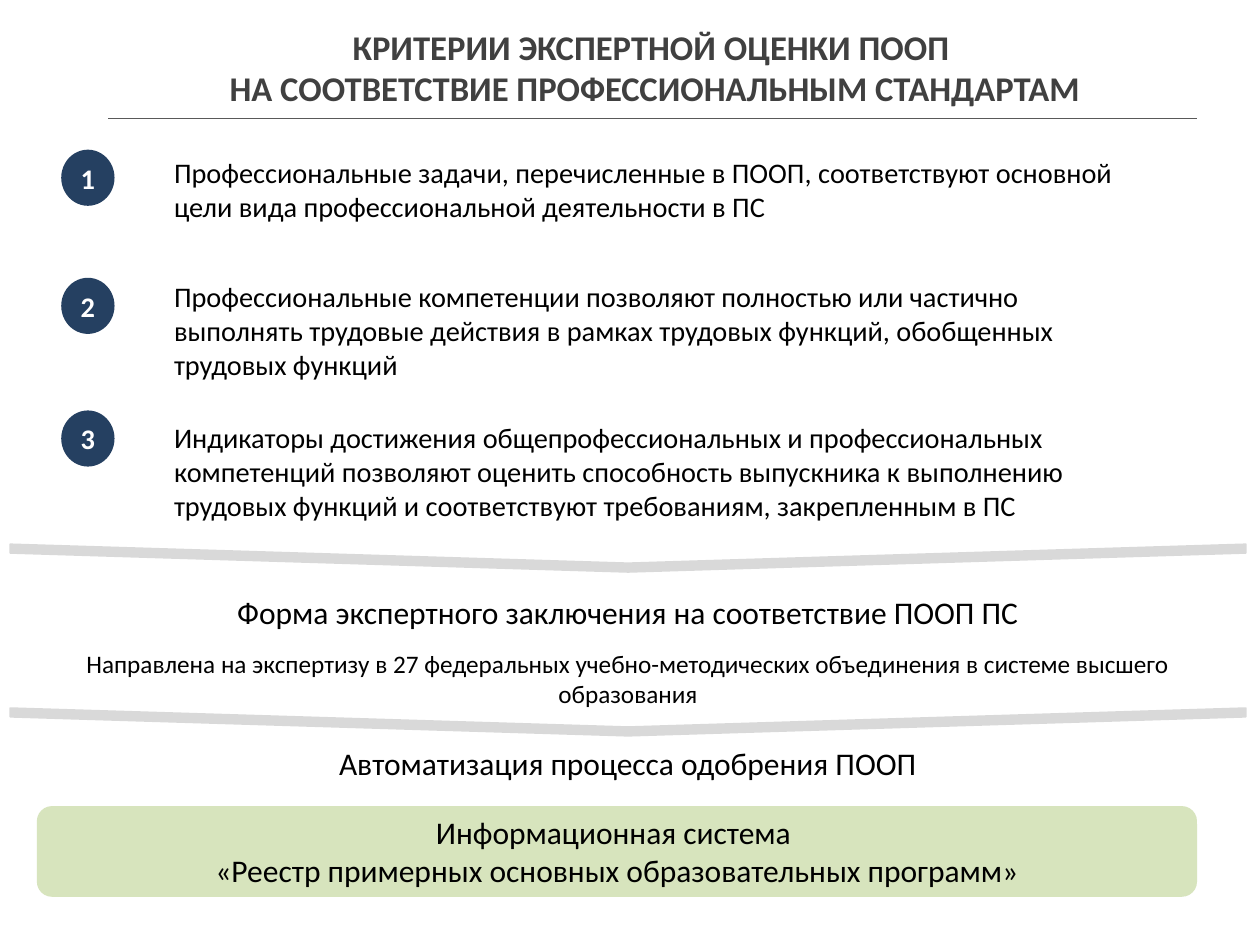
from pptx import Presentation
from pptx.dml.color import RGBColor
from pptx.enum.shapes import MSO_CONNECTOR, MSO_SHAPE as Shape
from pptx.enum.text import MSO_ANCHOR as Anchor, PP_ALIGN as Align
from pptx.oxml.ns import qn
from pptx.util import Inches, Pt
from lxml import etree

BLACK = RGBColor(0x00, 0x00, 0x00)
WHITE = RGBColor(0xFF, 0xFF, 0xFF)
TITLE_GRAY = RGBColor(0x40, 0x40, 0x40)
RULE_GRAY = RGBColor(0x59, 0x59, 0x59)
CHEVRON_GRAY = RGBColor(0xD9, 0xD9, 0xD9)
NAVY = RGBColor(0x25, 0x40, 0x61)
GREEN = RGBColor(0xD7, 0xE4, 0xBD)

presentation = Presentation()
presentation.slide_width = Inches(22.22)
presentation.slide_height = Inches(16.67)
slide = presentation.slides.add_slide(presentation.slide_layouts[6])


def write_text(shape, lines, size, color=BLACK, bold=False, align=Align.CENTER, anchor=Anchor.TOP):
    frame = shape.text_frame
    frame.word_wrap = True
    frame.vertical_anchor = anchor
    paragraph = frame.paragraphs[0]
    paragraph.alignment = align
    for index, line in enumerate(lines):
        if index:
            paragraph.add_line_break()
        run = paragraph.add_run()
        run.text = line
        run.font.name = "Calibri"
        run.font.size = Pt(size)
        run.font.bold = bold
        run.font.color.rgb = color


def add_filled(kind, left, top, width, height, color):
    shape = slide.shapes.add_shape(kind, Inches(left), Inches(top), Inches(width), Inches(height))
    shape.shadow.inherit = False
    shape.fill.solid()
    shape.fill.fore_color.rgb = color
    shape.line.fill.background()
    return shape


# Title and the rule below it
rule = slide.shapes.add_connector(
    MSO_CONNECTOR.STRAIGHT, Inches(1.91), Inches(2.08), Inches(21.11), Inches(2.08))
rule.line.color.rgb = RULE_GRAY
rule.line.width = Pt(0.75)
etree.SubElement(rule.element.spPr, qn("a:effectLst"))

title = slide.shapes.add_textbox(Inches(2.01), Inches(0.48), Inches(19.09), Inches(1.41))
title.text_frame.margin_left = title.text_frame.margin_right = Inches(0.22)
title.text_frame.margin_top = title.text_frame.margin_bottom = Inches(0.11)
write_text(title, ["КРИТЕРИИ ЭКСПЕРТНОЙ ОЦЕНКИ ПООП ",
                   "НА СООТВЕТСТВИЕ ПРОФЕССИОНАЛЬНЫМ СТАНДАРТАМ"],
           44, TITLE_GRAY, bold=True, anchor=Anchor.MIDDLE)

# Numbered criteria: circle top, text top, text height, text
criteria = [
    (2.64, 2.68, 1.31, "Профессиональные задачи, перечисленные в ПООП, соответствуют основной "
     "цели вида профессиональной деятельности в ПС"),
    (4.9, 4.88, 1.92, "Профессиональные компетенции позволяют полностью или частично "
     "выполнять трудовые действия в рамках трудовых функций, обобщенных трудовых функций"),
    (7.24, 7.36, 1.92, "Индикаторы достижения общепрофессиональных и профессиональных "
     "компетенций позволяют оценить способность выпускника к выполнению "
     "трудовых функций и соответствуют требованиям, закрепленным в ПС"),
]
for number, (circle_top, text_top, height, text) in enumerate(criteria, start=1):
    circle = add_filled(Shape.OVAL, 1.08, circle_top, 0.94, 0.99, NAVY)
    write_text(circle, [str(number)], 36, WHITE, bold=True)
    criterion = slide.shapes.add_textbox(
        Inches(2.97), Inches(text_top), Inches(17.29), Inches(height))
    write_text(criterion, [text], 36, align=Align.LEFT)

# Wide chevrons pointing down between the stages
for top in (-1.05, 1.84):
    chevron = add_filled(Shape.CHEVRON, 10.83, top, 0.49, 21.79, CHEVRON_GRAY)
    chevron.adjustments[0] = 0.683
    chevron.rotation = 90
    chevron.line.color.rgb = CHEVRON_GRAY
    chevron.line.width = Pt(2)

# Stage captions
captions = [
    (0.65, 10.41, 20.84, 0.77, 40, "Форма экспертного заключения на соответствие ПООП ПС"),
    (0.18, 11.38, 21.79, 1.18, 32, "Направлена на экспертизу в 27 федеральных "
     "учебно-методических объединения в системе высшего образования"),
    (0.65, 13.08, 20.84, 0.77, 40, "Автоматизация процесса одобрения ПООП"),
]
for left, top, width, height, size, text in captions:
    caption = slide.shapes.add_textbox(Inches(left), Inches(top), Inches(width), Inches(height))
    write_text(caption, [text], size)

# Information system panel
panel = add_filled(Shape.ROUNDED_RECTANGLE, 0.65, 14.22, 20.46, 1.6, GREEN)
write_text(panel, ["Информационная система ",
                   "«Реестр примерных основных образовательных программ»"], 40)

presentation.save("out.pptx")
